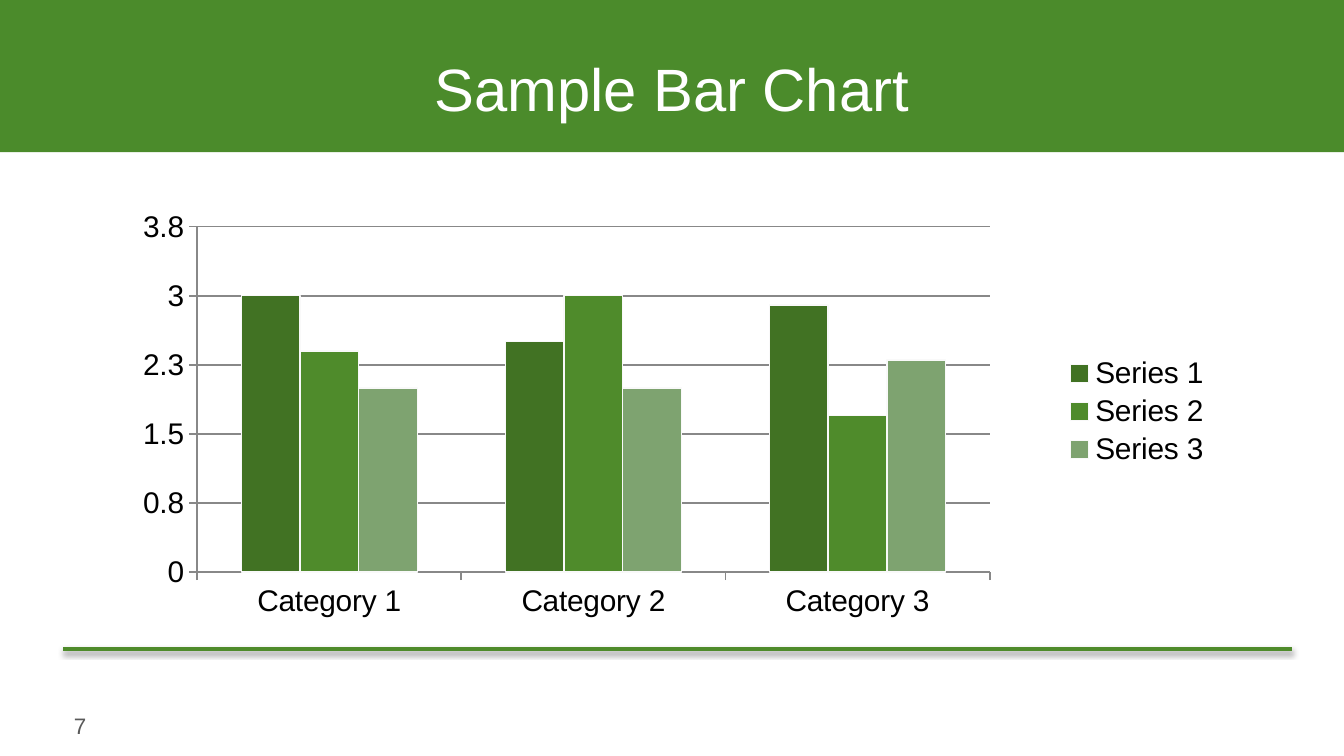
from typing import Any, NamedTuple

import pptx
import pptx.chart.data
import pptx.dml.color
import pptx.enum.chart
import pptx.enum.shapes
import pptx.enum.text
import pptx.oxml
import pptx.oxml.ns
import pptx.util

Pt = pptx.util.Pt
RGBColor = pptx.dml.color.RGBColor
Align = pptx.enum.text.PP_ALIGN
Anchor = pptx.enum.text.MSO_ANCHOR
Tick = pptx.enum.chart.XL_TICK_MARK

FONT = "Arial"
BLACK = RGBColor(0x00, 0x00, 0x00)
WHITE = RGBColor(0xFF, 0xFF, 0xFF)
GRAY = RGBColor(0x59, 0x59, 0x59)
GRID = RGBColor(0x88, 0x88, 0x88)
EDGE = RGBColor(0xF9, 0xF9, 0xF9)
BAND = RGBColor(0x4B, 0x8B, 0x2B)
DARK = RGBColor(0x41, 0x72, 0x23)
GREEN = RGBColor(0x4F, 0x8B, 0x2B)
SAGE = RGBColor(0x7E, 0xA3, 0x70)


class Box(NamedTuple):
    left: float
    top: float
    width: float
    height: float

    def lengths(self) -> list[int]:
        return [Pt(side) for side in self]


class Series(NamedTuple):
    name: str
    values: tuple[float, ...]
    color: RGBColor


PAGE = Box(0, 0, 720, 405)
CHART = Box(60.5, 103.7, 595.4, 233.3)
PLOT = Box(45.2, 17.7, 424.5, 185.2)  # relative to the chart
NAMES = ["Category 1", "Category 2", "Category 3"]
SERIES = [
    Series("Series 1", (3, 2.5, 2.9), DARK),
    Series("Series 2", (2.4, 3, 1.7), GREEN),
    Series("Series 3", (2, 2, 2.3), SAGE),
]


def style_font(font: Any, size: float, color: RGBColor) -> None:
    font.name = FONT
    font.size = Pt(size)
    font.color.rgb = color


def style_line(line: Any, color: RGBColor, width: float) -> None:
    line.color.rgb = color
    line.width = Pt(width)


def add_rect(slide: Any, box: Box, color: RGBColor) -> Any:
    rect = slide.shapes.add_shape(
        pptx.enum.shapes.MSO_SHAPE.RECTANGLE, *box.lengths())
    rect.shadow.inherit = False
    rect.fill.solid()
    rect.fill.fore_color.rgb = color
    rect.line.fill.background()
    return rect


def write(shape: Any, text: str, *, size: float, color: RGBColor,
          align: Any = Align.LEFT, anchor: Any = Anchor.TOP,
          wrap: bool = True) -> None:
    frame = shape.text_frame
    frame.word_wrap = wrap
    frame.vertical_anchor = anchor
    frame.margin_left = frame.margin_right = Pt(3.6)
    frame.margin_top = frame.margin_bottom = Pt(3.6)
    para = frame.paragraphs[0]
    para.text = text
    para.alignment = align
    style_font(para.font, size, color)


def add_rule(slide: Any, left: float, right: float, top: float) -> None:
    """Draw the green footer line with its soft shadow below."""
    rule = slide.shapes.add_connector(
        pptx.enum.shapes.MSO_CONNECTOR.STRAIGHT,
        Pt(left), Pt(top), Pt(right), Pt(top))
    style_line(rule.line, GREEN, 2)
    space = pptx.oxml.ns.nsdecls("a")
    rule._element.spPr.append(pptx.oxml.parse_xml(
        f'<a:effectLst {space}><a:outerShdw blurRad="{Pt(3)}" '
        f'dist="{Pt(1.6)}" dir="5400000" rotWithShape="0">'
        '<a:srgbClr val="000000"><a:alpha val="38000"/></a:srgbClr>'
        '</a:outerShdw></a:effectLst>'))


def style_axis(axis: Any) -> None:
    axis.major_tick_mark = Tick.OUTSIDE
    axis.minor_tick_mark = Tick.NONE
    style_font(axis.tick_labels.font, 16, BLACK)
    style_line(axis.format.line, GRID, 1)


def place_plot(chart: Any) -> None:
    """Fix the inner plot area at PLOT within the chart."""
    area = chart._chartSpace.chart.plotArea
    for old in area.findall(pptx.oxml.ns.qn("c:layout")):
        area.remove(old)
    shares = {
        "x": PLOT.left / CHART.width,
        "y": PLOT.top / CHART.height,
        "w": PLOT.width / CHART.width,
        "h": PLOT.height / CHART.height,
    }
    modes = "".join(f'<c:{key}Mode val="edge"/>' for key in "xy")
    sides = "".join(f'<c:{key} val="{share:.4f}"/>'
                    for key, share in shares.items())
    space = pptx.oxml.ns.nsdecls("c")
    area.insert(0, pptx.oxml.parse_xml(
        f'<c:layout {space}><c:manualLayout><c:layoutTarget val="inner"/>'
        f'{modes}{sides}</c:manualLayout></c:layout>'))


def add_chart(slide: Any) -> None:
    data = pptx.chart.data.CategoryChartData()
    data.categories = NAMES
    for item in SERIES:
        data.add_series(item.name, item.values)
    chart = slide.shapes.add_chart(
        pptx.enum.chart.XL_CHART_TYPE.COLUMN_CLUSTERED,
        *CHART.lengths(), data).chart
    chart.has_title = False
    style_font(chart.font, 10, BLACK)
    place_plot(chart)

    plot = chart.plots[0]
    plot.gap_width = 150
    plot.overlap = 0
    plot.vary_by_categories = False
    for item, bars in zip(SERIES, plot.series):
        bars.format.fill.solid()
        bars.format.fill.fore_color.rgb = item.color
        style_line(bars.format.line, EDGE, 0.75)

    style_axis(chart.category_axis)
    chart.category_axis.tick_label_position = (
        pptx.enum.chart.XL_TICK_LABEL_POSITION.LOW)
    axis = chart.value_axis
    style_axis(axis)
    axis.minimum_scale = 0
    axis.maximum_scale = 3.75
    axis.major_unit = 0.75
    axis.tick_labels.number_format = "0.#"
    axis.tick_labels.number_format_is_linked = False
    axis.has_major_gridlines = True
    style_line(axis.major_gridlines.format.line, GRID, 1)

    chart.has_legend = True
    chart.legend.position = pptx.enum.chart.XL_LEGEND_POSITION.RIGHT
    chart.legend.include_in_layout = True
    style_font(chart.legend.font, 16, BLACK)


def main() -> None:
    deck = pptx.Presentation()
    deck.slide_width, deck.slide_height = Pt(PAGE.width), Pt(PAGE.height)
    slide = deck.slides.add_slide(deck.slide_layouts[6])

    add_rect(slide, Box(0, 0, PAGE.width, 81.5), BAND)
    add_rule(slide, 33.8, 692, 347.8)
    number = slide.shapes.add_textbox(*Box(36, 378, 13.7, 21.6).lengths())
    write(number, "7", size=12, color=GRAY, wrap=False)
    add_chart(slide)
    title = add_rect(slide, Box(36, 16.6, 648, 60.5), BAND)
    style_line(title.line, BAND, 0.25)
    write(title, "Sample Bar Chart", size=32, color=WHITE,
          align=Align.CENTER, anchor=Anchor.MIDDLE)

    deck.save("out.pptx")


if __name__ == "__main__":
    main()
